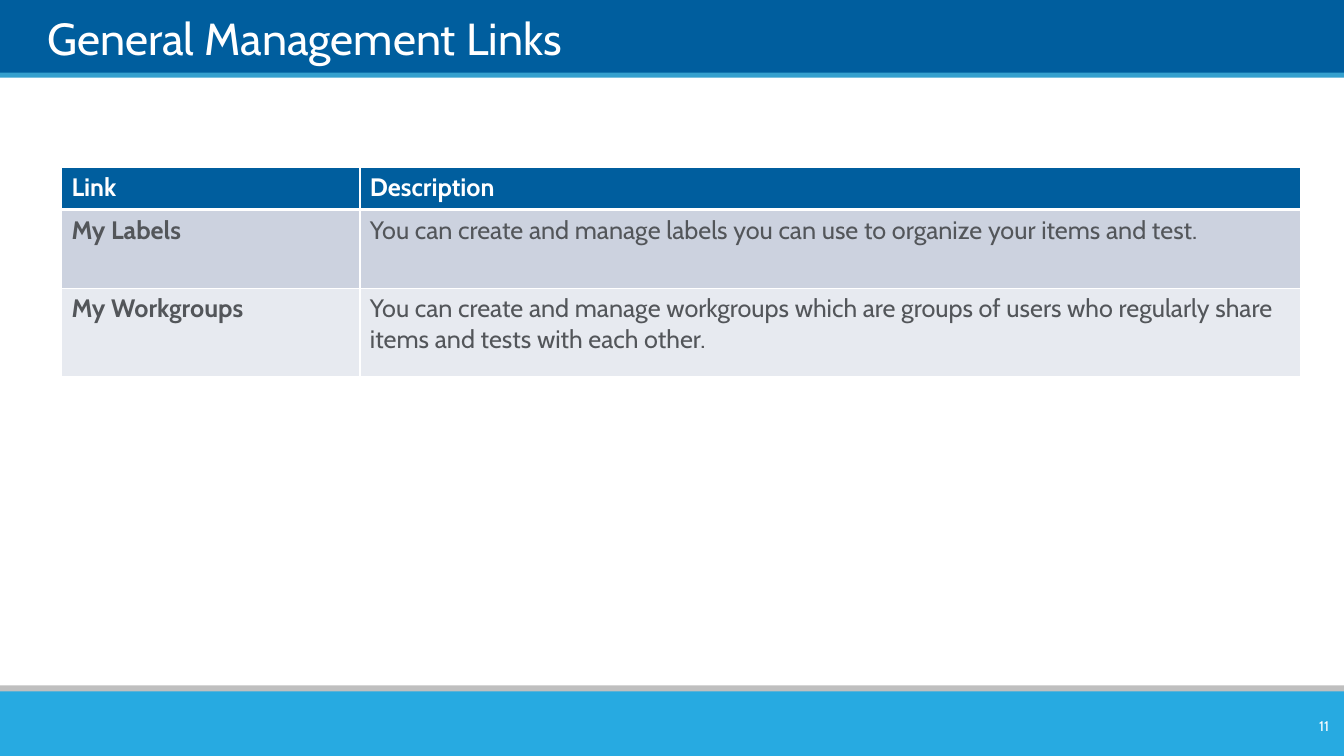
from lxml import etree
from pptx import Presentation
from pptx import util as u
from pptx.dml.color import RGBColor
from pptx.enum import shapes, text
from pptx.oxml.ns import qn

TITLE = "General Management Links"
PAGE = "11"
ROWS = [
    ("Link", "Description"),
    ("My Labels", "You can create and manage labels you can use to organize "
                  "your items and test."),
    ("My Workgroups", "You can create and manage workgroups which are groups of "
                      "users who regularly share items and tests with each other."),
]
COLORS = {"navy": "005E9E", "stripe": "35A0CE", "gray": "BFBFBF", "sky": "27AAE1",
          "white": "FFFFFF", "ink": "53565A", "band1": "CCD2DF", "band2": "E7EAF0"}
FONT = "Cabin"

# Lengths in px, 100 px to the inch
PX = 9144
WIDTH, HEIGHT = 1333, 750
BANDS = [(-1, 75, "navy"), (72, 5, "stripe"), (680, 14, "gray"), (686, 64, "sky")]
TITLE_BOX = (47, 7, 1243, 57)
PAGE_BOX = (1251, 705, 77, 30)
TABLE_AT = (61, 166)
COL_WIDTHS = (296, 933)
ROW_HEIGHTS = (42, 78, 88)
ROW_FILLS = ("navy", "band1", "band2")


def px(*lengths):
    return [u.Emu(n * PX) for n in lengths]


def rgb(name):
    return RGBColor.from_string(COLORS[name])


def add_run(p, words, size, color, bold=False):
    r = p.add_run()
    r.text = words
    r.font.name, r.font.size, r.font.bold = FONT, u.Pt(size), bold
    r.font.color.rgb = rgb(color)


def add_band(s, top, height, color):
    sp = s.shapes.add_shape(shapes.MSO_SHAPE.RECTANGLE, *px(0, top, WIDTH, height))
    sp.shadow.inherit = False
    sp.fill.solid()
    sp.fill.fore_color.rgb = rgb(color)
    sp.line.fill.background()


def add_label(s, box, words, size, anchor, align):
    tf = s.shapes.add_textbox(*px(*box)).text_frame
    tf.word_wrap = True
    tf.vertical_anchor = anchor
    p = tf.paragraphs[0]
    p.alignment = align
    add_run(p, words, size, "white")
    return tf


def add_border(cell, side, points):
    ln = etree.SubElement(cell._tc.get_or_add_tcPr(), qn(f"a:ln{side}"),
                          w=str(u.Pt(points)))
    fill = etree.SubElement(ln, qn("a:solidFill"))
    etree.SubElement(fill, qn("a:srgbClr"), val=COLORS["white"])


def add_links_table(s):
    size = (sum(COL_WIDTHS), sum(ROW_HEIGHTS))
    table = s.shapes.add_table(len(ROWS), len(COL_WIDTHS),
                               *px(*TABLE_AT, *size)).table
    for column, width in zip(table.columns, px(*COL_WIDTHS)):
        column.width = width
    for row, height in zip(table.rows, px(*ROW_HEIGHTS)):
        row.height = height
    for i, words in enumerate(ROWS):
        for j, word in enumerate(words):
            cell = table.cell(i, j)
            for side in "LRTB":
                header_rule = (i, side) in ((0, "B"), (1, "T"))
                add_border(cell, side, 3 if header_rule else 1)
            cell.fill.solid()
            cell.fill.fore_color.rgb = rgb(ROW_FILLS[i])
            add_run(cell.text_frame.paragraphs[0], word, 18,
                    "ink" if i else "white", bold=i == 0 or j == 0)


def main():
    prs = Presentation()
    prs.slide_width, prs.slide_height = px(WIDTH, HEIGHT)
    s = prs.slides.add_slide(prs.slide_layouts[6])
    for band in BANDS:
        add_band(s, *band)
    tf = add_label(s, TITLE_BOX, TITLE, 32, text.MSO_ANCHOR.BOTTOM, text.PP_ALIGN.LEFT)
    tf.margin_left = tf.margin_right = tf.margin_top = tf.margin_bottom = 0
    add_links_table(s)
    add_label(s, PAGE_BOX, PAGE, 10, text.MSO_ANCHOR.MIDDLE, text.PP_ALIGN.RIGHT)
    prs.save("out.pptx")


if __name__ == "__main__":
    main()
